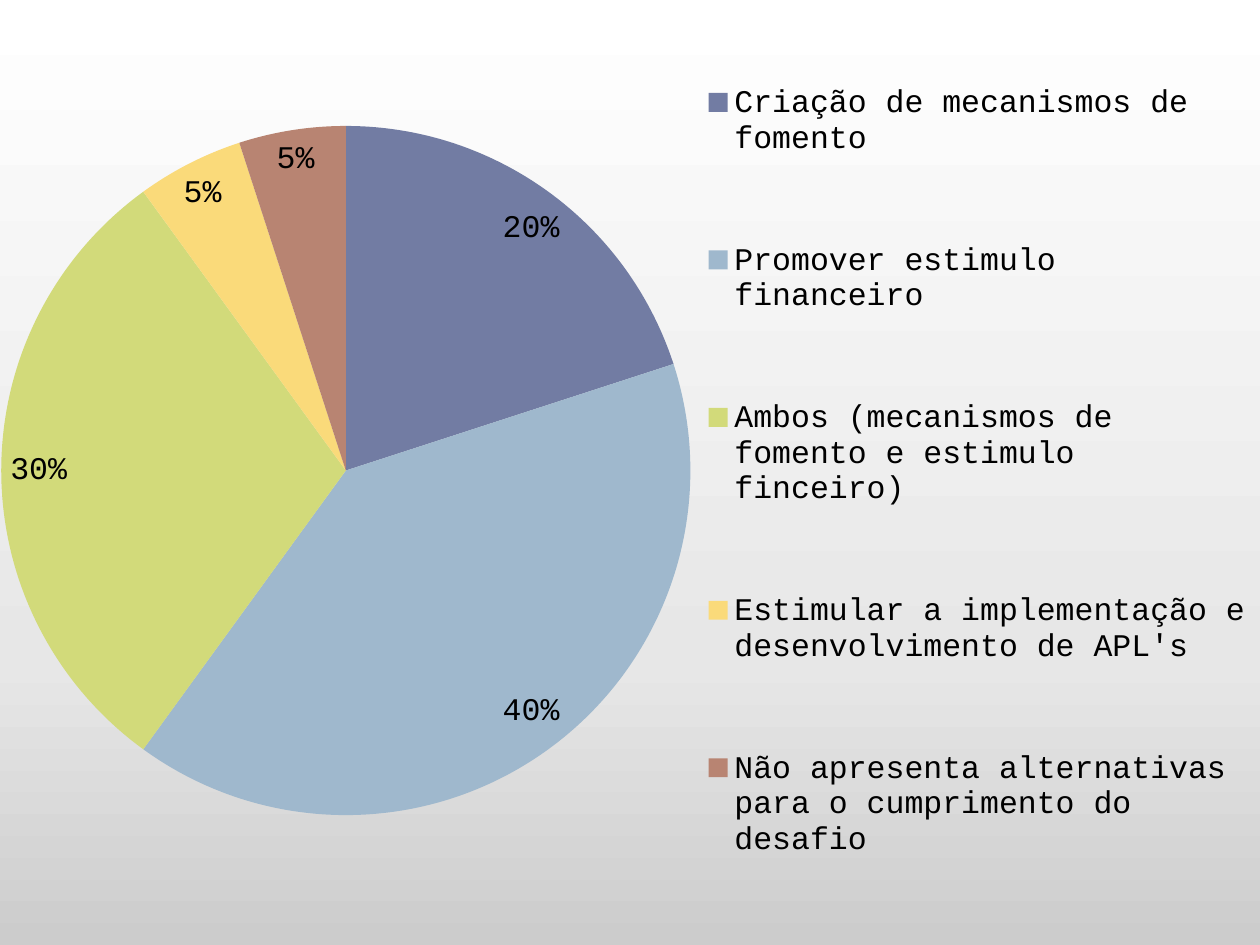
from copy import deepcopy
from dataclasses import dataclass

from lxml import etree
from pptx import Presentation
from pptx.chart.chart import Chart
from pptx.chart.data import CategoryChartData
from pptx.dml.color import RGBColor
from pptx.enum.chart import XL_CHART_TYPE, XL_LABEL_POSITION, XL_LEGEND_POSITION
from pptx.oxml.ns import qn
from pptx.slide import Slide
from pptx.util import Cm, Pt

PIE = XL_CHART_TYPE.PIE
BEST_FIT = XL_LABEL_POSITION.BEST_FIT
RIGHT = XL_LEGEND_POSITION.RIGHT
BLANK_LAYOUT = 6


@dataclass(frozen=True)
class Theme:
    font: str = "Courier New"
    size: Pt = Pt(18)
    text: str = "000000"
    # Gradient stops from the bottom of the slide to the top
    backdrop: tuple = ((0, "CCCCCC"), (0.3, "E7E7E7"), (1, "FFFFFF"))


@dataclass(frozen=True)
class Answer:
    label: str
    percent: int
    color: str


@dataclass(frozen=True)
class Area:
    """A box in fractions of the chart."""
    x: float
    y: float
    w: float
    h: float


THEME = Theme()
WIDTH, HEIGHT = Cm(25.4), Cm(19.05)
PLOT_AREA = Area(0.001, 0.081, 0.547, 0.834)
LEGEND_AREA = Area(0.563, 0, 0.437, 1)
ANSWERS = (
    Answer("Criação de mecanismos de fomento", 20, "727CA3"),
    Answer("Promover estimulo financeiro", 40, "9FB8CD"),
    Answer("Ambos (mecanismos de fomento e estimulo finceiro)", 30, "D2DA7A"),
    Answer("Estimular a implementação e desenvolvimento de APL's", 5, "FADA7A"),
    Answer("Não apresenta alternativas para o cumprimento do desafio", 5, "B88472"),
)


def paint_background(slide: Slide) -> None:
    fill = slide.background.fill
    fill.gradient()
    fill.gradient_angle = 90
    stop_list = next(slide.element.iter(qn("a:gsLst")))
    while len(stop_list) < len(THEME.backdrop):
        stop_list.append(deepcopy(stop_list[0]))
    for stop, (position, color) in zip(fill.gradient_stops, THEME.backdrop):
        stop.position = position
        stop.color.rgb = RGBColor.from_string(color)


def set_layout(parent: etree._Element, area: Area, after: str = "", inner: bool = False) -> None:
    """Give a chart part a manual layout, placed first or after the named child."""
    for old in parent.findall(qn("c:layout")):
        parent.remove(old)
    layout = etree.Element(qn("c:layout"))
    manual = etree.SubElement(layout, qn("c:manualLayout"))
    settings = {"layoutTarget": "inner"} if inner else {}
    settings |= {"xMode": "edge", "yMode": "edge",
                 "x": area.x, "y": area.y, "w": area.w, "h": area.h}
    for tag, value in settings.items():
        etree.SubElement(manual, qn(f"c:{tag}")).set("val", str(value))
    if after:
        parent.find(qn(after)).addnext(layout)
    else:
        parent.insert(0, layout)


def add_answer_pie(slide: Slide, answers: tuple[Answer, ...]) -> Chart:
    data = CategoryChartData()
    data.categories = [answer.label for answer in answers]
    data.add_series("Series 1", [answer.percent for answer in answers])
    chart = slide.shapes.add_chart(PIE, 0, 0, WIDTH, HEIGHT, data).chart
    chart.has_title = False
    chart.font.name = THEME.font
    chart.font.size = THEME.size
    chart.font.color.rgb = RGBColor.from_string(THEME.text)

    # Slices
    pie = chart.plots[0]
    pie.vary_by_categories = True
    for index, answer in enumerate(answers):
        slice_fill = pie.series[0].points[index].format.fill
        slice_fill.solid()
        slice_fill.fore_color.rgb = RGBColor.from_string(answer.color)

    # Percentages
    percentages = pie.series[0].data_labels
    percentages.show_percentage = True
    percentages.show_value = False
    percentages.number_format = "0%"
    percentages.number_format_is_linked = False
    percentages.position = BEST_FIT

    # Legend and placement
    chart.has_legend = True
    chart.legend.position = RIGHT
    chart.legend.include_in_layout = False
    chart_space = chart.element
    set_layout(next(chart_space.iter(qn("c:plotArea"))), PLOT_AREA, inner=True)
    set_layout(next(chart_space.iter(qn("c:legend"))), LEGEND_AREA, after="c:legendPos")
    return chart


def main() -> None:
    deck = Presentation()
    deck.slide_width, deck.slide_height = WIDTH, HEIGHT
    slide = deck.slides.add_slide(deck.slide_layouts[BLANK_LAYOUT])
    paint_background(slide)
    add_answer_pie(slide, ANSWERS)
    deck.save("out.pptx")


if __name__ == "__main__":
    main()
